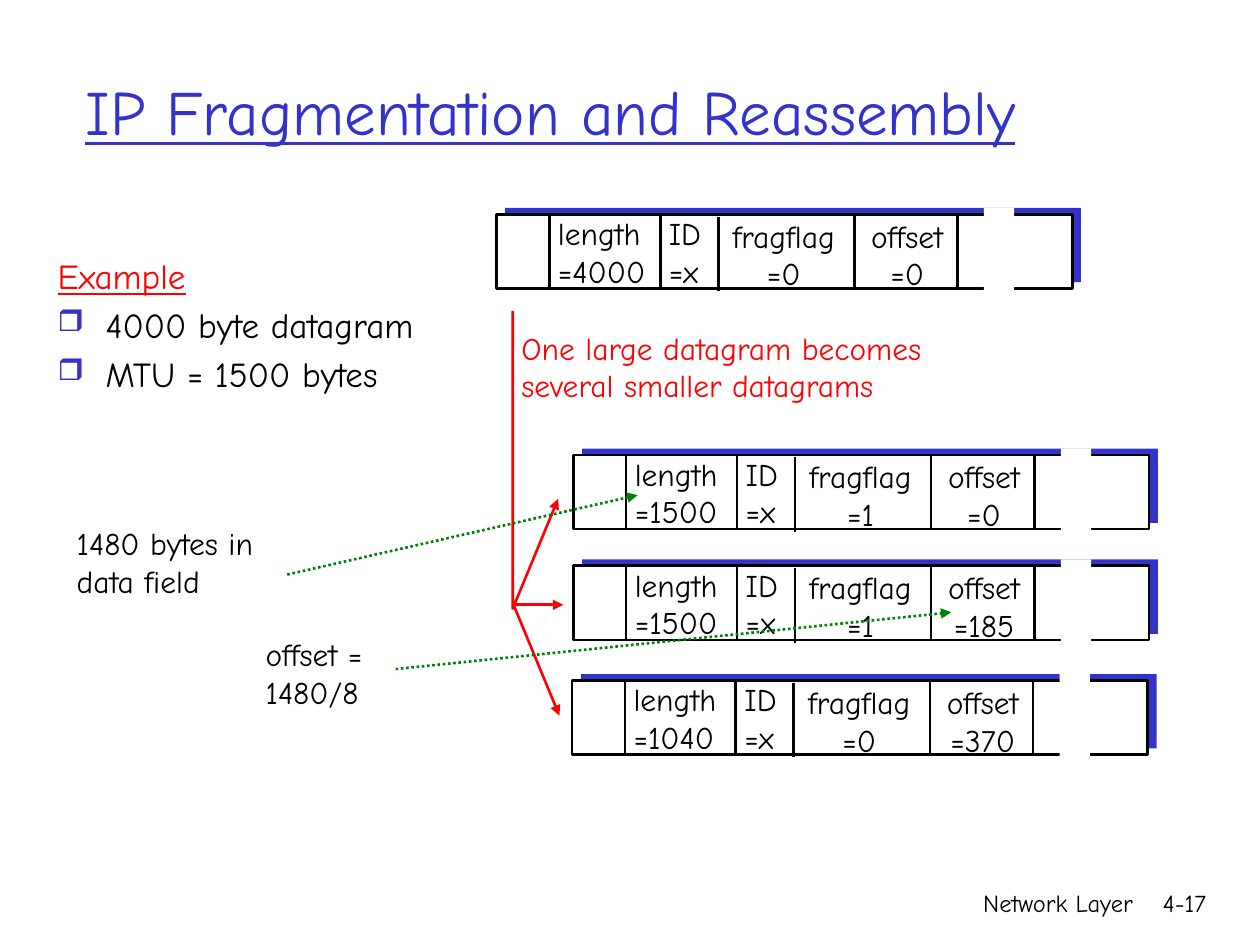
from typing import NamedTuple

from lxml import etree
from pptx import Presentation
from pptx import util as u
from pptx.dml.color import RGBColor
from pptx.enum import dml, shapes, text
from pptx.oxml.ns import qn

FONT = "Comic Neue"
BLACK = RGBColor(0, 0, 0)
WHITE = RGBColor(0xFF, 0xFF, 0xFF)
BLUE = RGBColor(0x33, 0x33, 0xCC)
RED = RGBColor(0xFF, 0, 0)
GREEN = RGBColor(0, 0x80, 0)
LINE_WIDTH = u.Pt(1.5)
LEFT, CENTER, RIGHT = text.PP_ALIGN.LEFT, text.PP_ALIGN.CENTER, text.PP_ALIGN.RIGHT

BAR_WIDTH, BAR_HEIGHT = 4.57, 0.59


class Datagram(NamedTuple):
    left: float
    top: float
    length: str
    fragflag: str
    offset: str


class Field(NamedTuple):
    name: str
    dx: float
    dy: float
    width: float
    align: text.PP_ALIGN


class Arrow(NamedTuple):
    start: tuple[float, float]
    end: tuple[float, float]


class Label(NamedTuple):
    lines: list[str]
    box: tuple[float, float, float, float]
    color: RGBColor = BLACK
    size: int = 18
    align: text.PP_ALIGN = LEFT
    wrap: bool = False


DATAGRAMS = [
    Datagram(3.94, 1.70, "4000", "0", "0"),
    Datagram(4.55, 3.61, "1500", "1", "0"),
    Datagram(4.55, 4.49, "1500", "1", "185"),
    Datagram(4.54, 5.40, "1040", "0", "370"),
]
FIELDS = [
    Field("ID", 1.27, -0.05, 0.52, LEFT),
    Field("offset", 2.78, -0.03, 0.96, CENTER),
    Field("fragflag", 1.70, -0.03, 1.16, CENTER),
    Field("length", 0.39, -0.05, 0.93, LEFT),
]
# Horizontal and vertical shift of each field divider from the bar's corner
DIVIDERS = [(0.42, 0), (1.30, 0), (1.76, 0.02), (2.84, 0), (3.66, 0)]

SPLIT_ARROWS = [Arrow((4.07, 4.80), (4.47, 4.80)), Arrow((4.08, 4.81), (4.44, 5.68))]
NOTE_ARROWS = [Arrow((2.28, 4.56), (5.06, 3.93)), Arrow((3.14, 5.31), (7.55, 4.86))]

FOOTERS = [
    Label(["Network Layer"], (5.92, 7, 3.17, 0.5), size=14, align=RIGHT, wrap=True),
    Label(["4-17"], (8.93, 7, 0.74, 0.5), size=14, align=RIGHT, wrap=True),
]
NOTES = [
    Label(["One large datagram becomes", "several smaller datagrams"],
          (4.04, 2.56, 3.57, 0.7), RED),
    Label(["1480 bytes in", "data field"], (0.51, 4.11, 1.85, 0.7)),
    Label(["offset =", "1480/8"], (2.01, 4.99, 1.16, 0.7)),
]


def add_run(paragraph, words: str, size: float, color: RGBColor, underline: bool = False):
    run = paragraph.add_run()
    run.text = words
    run.font.name = FONT
    run.font.size = u.Pt(size)
    run.font.color.rgb = color
    if underline:
        run.font.underline = True


def add_frame(parent, box: tuple[float, float, float, float], wrap: bool):
    frame = parent.add_textbox(*map(u.Inches, box)).text_frame
    frame.word_wrap = wrap
    return frame


def next_paragraph(frame, index: int):
    return frame.add_paragraph() if index else frame.paragraphs[0]


def draw_label(parent, label: Label):
    frame = add_frame(parent, label.box, label.wrap)
    for index, line in enumerate(label.lines):
        paragraph = next_paragraph(frame, index)
        paragraph.alignment = label.align
        add_run(paragraph, line, label.size, label.color)


def draw_box(parent, left: float, top: float, width: float, height: float,
             fill: RGBColor, outlined: bool = False):
    box = parent.add_shape(shapes.MSO_SHAPE.RECTANGLE,
                           *map(u.Inches, (left, top, width, height)))
    box.shadow.inherit = False
    box.fill.solid()
    box.fill.fore_color.rgb = fill
    if outlined:
        box.line.color.rgb = BLACK
        box.line.width = LINE_WIDTH
    else:
        box.line.fill.background()


def add_arrowhead(line_shape):
    outline = line_shape.element.spPr.find(qn("a:ln"))
    etree.SubElement(outline, qn("a:tailEnd"), type="triangle")


def draw_line(parent, start: tuple[float, float], end: tuple[float, float],
              color: RGBColor, arrow: bool = False, dotted: bool = False):
    line = parent.add_connector(shapes.MSO_CONNECTOR.STRAIGHT,
                                *map(u.Inches, (*start, *end)))
    line.line.color.rgb = color
    line.line.width = LINE_WIDTH
    if dotted:
        line.line.dash_style = dml.MSO_LINE.ROUND_DOT
    if arrow:
        add_arrowhead(line)
    etree.SubElement(line.element.spPr, qn("a:effectLst"))


def draw_datagram(slide, datagram: Datagram):
    group = slide.shapes.add_group_shape().shapes
    left, top = datagram.left, datagram.top
    draw_box(group, left + 0.07, top - 0.05, BAR_WIDTH, BAR_HEIGHT, BLUE)
    draw_box(group, left, top, BAR_WIDTH, BAR_HEIGHT, WHITE, outlined=True)
    values = {"ID": "x", "length": datagram.length,
              "fragflag": datagram.fragflag, "offset": datagram.offset}
    for field in FIELDS:
        box = (left + field.dx, top + field.dy, field.width, 0.7)
        draw_label(group, Label([field.name, f"={values[field.name]}"], box,
                                align=field.align))
    for dx, dy in DIVIDERS:
        x, y = left + dx, top + dy
        draw_line(group, (x, y), (x, y + BAR_HEIGHT), BLACK)
    draw_box(group, left + 3.87, top - 0.05, 0.24, 0.66, WHITE)


def draw_split(slide):
    """Draw the red stem and its three branches to the fragments."""
    group = slide.shapes.add_group_shape().shapes
    builder = group.build_freeform(u.Inches(4.07), u.Inches(2.47))
    builder.add_line_segments([(u.Inches(4.07), u.Inches(4.83)),
                               (u.Inches(4.43), u.Inches(3.96))], close=False)
    stem = builder.convert_to_shape()
    stem.fill.background()
    stem.line.color.rgb = RED
    stem.line.width = LINE_WIDTH
    add_arrowhead(stem)
    stem.shadow.inherit = False
    for arrow in SPLIT_ARROWS:
        draw_line(group, arrow.start, arrow.end, RED, arrow=True)


def add_bullet(properties):
    color = etree.SubElement(properties, qn("a:buClr"))
    etree.SubElement(color, qn("a:srgbClr"), val=str(BLUE))
    etree.SubElement(properties, qn("a:buSzPct"), val="85000")
    etree.SubElement(properties, qn("a:buChar"), char="❒")


def draw_example(slide):
    frame = add_frame(slide.shapes, (0.36, 1.97, 3.1, 1.84), wrap=True)
    for index, line in enumerate(["Example", "4000 byte datagram", "MTU = 1500 bytes"]):
        heading = index == 0
        paragraph = next_paragraph(frame, index)
        paragraph.space_before = u.Pt(4)
        properties = paragraph._p.get_or_add_pPr()
        properties.set("marL", str(u.Inches(0.38)))
        properties.set("indent", str(u.Inches(-0.38)))
        if not heading:
            add_bullet(properties)
        add_run(paragraph, line, 20, RED if heading else BLACK, underline=heading)


def main():
    deck = Presentation()
    deck.slide_width, deck.slide_height = u.Inches(10), u.Inches(7.5)
    slide = deck.slides.add_slide(deck.slide_layouts[6])

    for footer in FOOTERS:
        draw_label(slide.shapes, footer)
    title = add_frame(slide.shapes, (0.58, 0.25, 8.5, 1.25), wrap=True)
    title.vertical_anchor = text.MSO_ANCHOR.MIDDLE
    add_run(title.paragraphs[0], "IP Fragmentation and Reassembly", 36, BLUE, underline=True)

    for datagram in DATAGRAMS:
        draw_datagram(slide, datagram)
    draw_split(slide)
    draw_example(slide)
    for note in NOTES:
        draw_label(slide.shapes, note)
    for arrow in NOTE_ARROWS:
        draw_line(slide.shapes, arrow.start, arrow.end, GREEN, arrow=True, dotted=True)
    deck.save("out.pptx")


if __name__ == "__main__":
    main()
